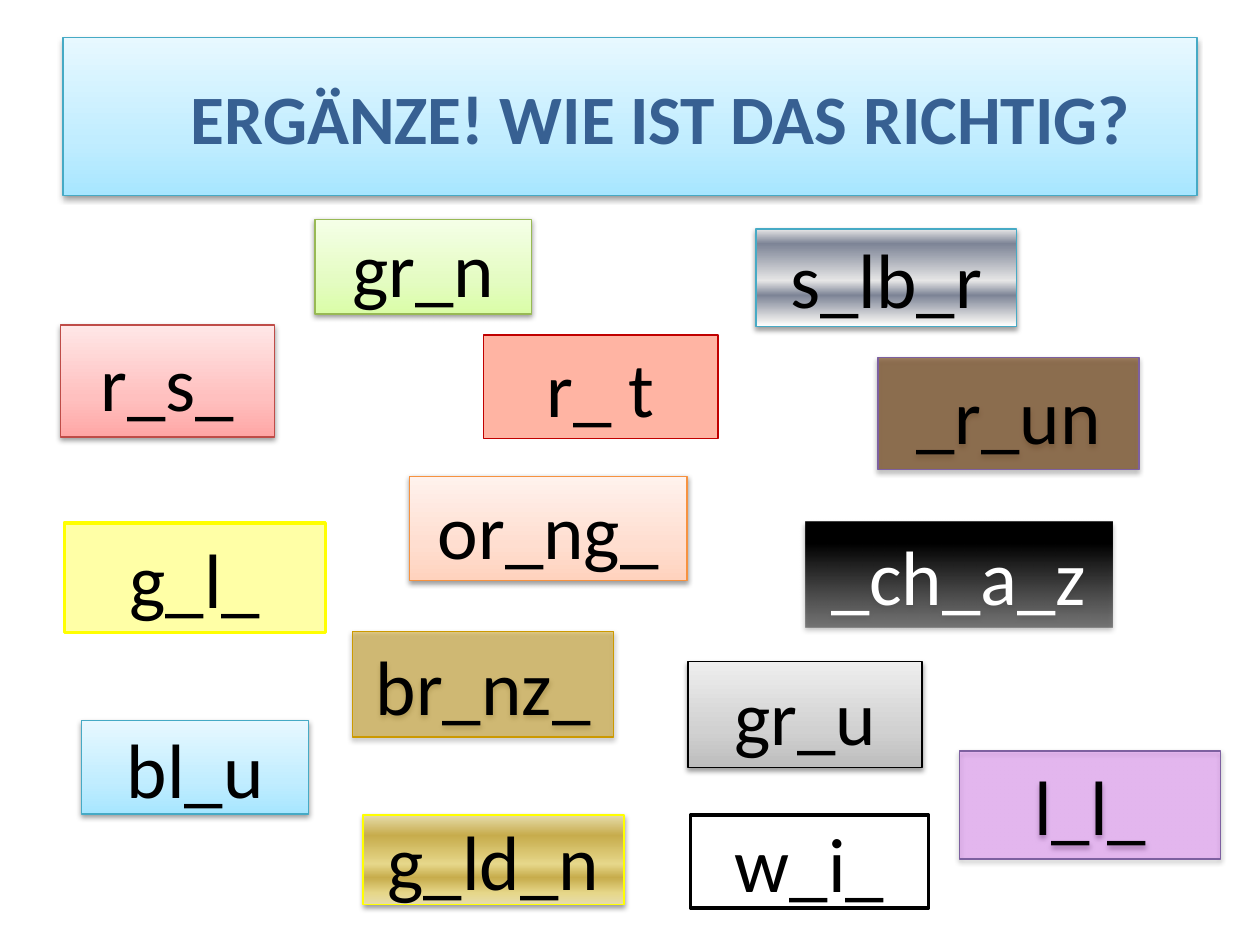
"""Build a German colour-word gap exercise slide."""
from dataclasses import dataclass
from typing import Any

from lxml import etree
from pptx import Presentation
from pptx import util as u
from pptx.dml import color
from pptx.enum import shapes, text
from pptx.oxml import ns


def ramp(*stops):
    return [(pos, tint, 100) for pos, tint in stops]


def soft(low, mid, high):
    return ramp((0, low), (35, mid), (100, high))


@dataclass(frozen=True)
class Theme:
    font: str = "Calibri"
    head: float = 39.6
    word: float = 44
    thin: float = 0.75
    ink: str = "000000"
    navy: str = "376092"
    white: str = "FFFFFF"
    yellow: str = "FFFF00"
    aqua: str = "46AAC5"
    plum: str = "7D60A0"
    ochre: str = "CC9900"


T = Theme()
SKY = soft("A7E6FF", "C1EDFF", "E7F8FF")
ROSE = soft("FFA6A5", "FFC0BF", "FFE7E7")
LIME = soft("DAFDA7", "E4FCC2", "F5FFE7")
PEACH = soft("FFD2BD", "FFDED0", "FFF2ED")
GREY = soft("BDBDBD", "D1D1D1", "EEEEEE")
STEEL = ramp((0, T.white), (7, "E6E6E6"), (32, "7D8496"),
             (47, "E6E6E6"), (85, "7D8496"), (100, "E6E6E6"))
GOLD = ramp((0, "E6DCAC"), (12, "E6D78A"), (30, "C7AC4C"),
            (45, "E6D78A"), (77, "C7AC4C"), (100, "E6DCAC"))
COAL = [(0, "4F4F4F", 67), (80, T.ink, 100), (100, T.ink, 100)]


def node(root, tag, **attrs):
    return etree.SubElement(root, ns.qn(f"a:{tag}"),
                            {key: str(val) for key, val in attrs.items()})


def tone(root, tint, alpha):
    item = node(root, "srgbClr", val=tint)
    if alpha < 100:
        node(item, "alpha", val=alpha * 1000)


@dataclass
class Deck:
    theme: Theme
    slide: Any

    def paint(self, box, fill):
        if isinstance(fill, list):
            box.fill.gradient()
            grad = box._element.spPr.find(ns.qn("a:gradFill"))
            for kid in list(grad):
                grad.remove(kid)
            stops = node(grad, "gsLst")
            for pos, tint, alpha in fill:
                tone(node(stops, "gs", pos=pos * 1000), tint, alpha)
            node(grad, "lin", ang=270 * 60000, scaled=0)
        else:
            box.fill.solid()
            solid = box._element.spPr.find(ns.qn("a:solidFill"))
            for kid in list(solid):
                solid.remove(kid)
            tone(solid, *fill)

    def edge(self, box, tint, width):
        if tint is None:
            box.line.fill.background()
            return
        box.line.color.rgb = color.RGBColor.from_string(tint)
        box.line.width = u.Pt(width)

    def shade(self, box, alpha, dist):
        root = box._element.spPr.find(ns.qn("a:effectLst"))
        cast = node(root, "outerShdw", blurRad=u.Pt(3.1), dist=u.Pt(dist),
                    dir=90 * 60000, rotWithShape=0)
        tone(cast, self.theme.ink, alpha)

    def label(self, box, words, ink, **form):
        frame = box.text_frame
        frame.word_wrap = True
        frame.vertical_anchor = text.MSO_ANCHOR.MIDDLE
        para = frame.paragraphs[0]
        para.alignment = text.PP_ALIGN.CENTER
        run = para.add_run()
        run.text = words
        for key, val in {"name": self.theme.font, **form}.items():
            setattr(run.font, key, val)
        run.font.color.rgb = color.RGBColor.from_string(ink)

    def rect(self, spot, fill, line, width=T.thin, cast=(38, 1.6)):
        box = self.slide.shapes.add_shape(
            shapes.MSO_SHAPE.RECTANGLE, *map(u.Cm, spot))
        box.shadow.inherit = False
        self.paint(box, fill)
        self.edge(box, line, width)
        if cast:
            self.shade(box, *cast)
        return box

    def card(self, words, spot, fill, line, ink=T.ink, **look):
        box = self.rect(spot, fill, line, **look)
        self.label(box, words, ink, size=u.Pt(self.theme.word))

    def title(self, words, spot, fill, line):
        box = self.rect(spot, fill, line)
        box.text_frame.margin_left = u.Cm(1.5)
        self.label(box, words, self.theme.navy,
                   size=u.Pt(self.theme.head), bold=True)


CARDS = [
    ("r_s_", (1.22, 6.55, 4.32, 2.26), ROSE, "BF4C48", {}),
    ("gr_n", (6.35, 4.42, 4.37, 1.91), LIME, "98B955", {}),
    ("g_l_", (1.3, 10.54, 5.26, 2.21), ("FFFF99", 87), T.yellow,
     {"width": 2, "cast": None}),
    ("or_ng_", (8.26, 9.6, 5.59, 2.11), PEACH, "F69240", {}),
    ("bl_u", (1.65, 14.53, 4.57, 1.88), SKY, T.aqua, {}),
    ("w_i_", (13.92, 16.43, 4.8, 1.88), (T.white, 100), T.ink,
     {"width": 2, "cast": None}),
    ("r_ t", (9.75, 6.76, 4.72, 2.08), ("FF6D4B", 51), "C00000",
     {"width": 1, "cast": None}),
    ("_r_un", (17.7, 7.21, 5.26, 2.26), ("663300", 60), T.plum, {}),
    ("gr_u", (13.87, 13.34, 4.72, 2.13), GREY, T.ink, {}),
    ("br_nz_", (7.11, 12.73, 5.26, 2.13), (T.ochre, 45), T.ochre, {}),
    ("s_lb_r", (15.24, 4.62, 5.26, 1.96), STEEL, T.aqua, {}),
    ("g_ld_n", (7.32, 16.43, 5.26, 1.8), GOLD, T.yellow, {}),
    ("_ch_a_z", (16.23, 10.52, 6.2, 2.13), COAL, None,
     {"ink": T.white, "cast": (35, 1.8)}),
    ("l_l_", (19.35, 15.14, 5.26, 2.18), ("CC00FF", 22), T.plum, {}),
]


def main():
    show = Presentation()
    show.slide_width, show.slide_height = u.Cm(25.4), u.Cm(19.05)
    deck = Deck(T, show.slides.add_slide(show.slide_layouts[6]))
    deck.title("ERGÄNZE! WIE IST DAS RICHTIG?",
               (1.27, 0.76, 22.86, 3.18), SKY, T.aqua)
    for words, spot, fill, line, look in CARDS:
        deck.card(words, spot, fill, line, **look)
    show.save("out.pptx")


if __name__ == "__main__":
    main()
